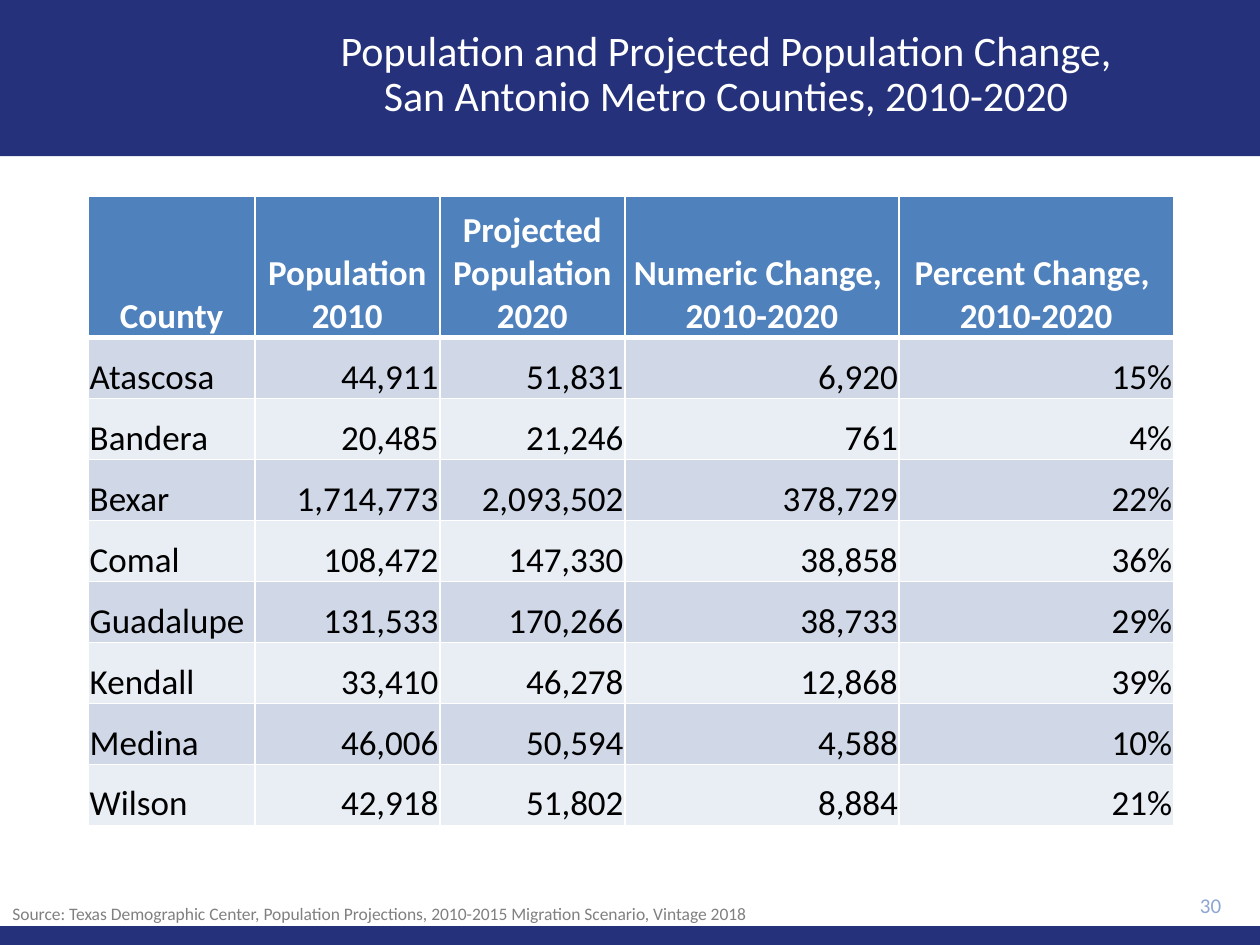
"""Build the San Antonio metro county population slide."""
from pptx import Presentation
from pptx import util as u
from pptx.dml.color import RGBColor
from pptx.enum import shapes, text
from pptx.oxml import parse_xml
from pptx.oxml.ns import nsdecls

Pt = u.Pt
TITLE = "Population and Projected Population Change, \vSan Antonio Metro Counties, 2010-2020 "
HEADINGS = ["County", "Population 2010", "Projected Population 2020",
            "Numeric Change, \n2010-2020", "Percent Change, \n2010-2020"]
COUNTIES = [
    ("Atascosa", "44,911", "51,831", "6,920", "15%"),
    ("Bandera", "20,485", "21,246", "761", "4%"),
    ("Bexar", "1,714,773", "2,093,502", "378,729", "22%"),
    ("Comal", "108,472", "147,330", "38,858", "36%"),
    ("Guadalupe", "131,533", "170,266", "38,733", "29%"),
    ("Kendall", "33,410", "46,278", "12,868", "39%"),
    ("Medina", "46,006", "50,594", "4,588", "10%"),
    ("Wilson", "42,918", "51,802", "8,884", "21%"),
]
SOURCE = ("Source: Texas Demographic Center, Population Projections, "
          "2010-2015 Migration Scenario, Vintage 2018")
PAGE = "30"

FONT = "Calibri"
NAVY = RGBColor(0x25, 0x32, 0x7B)
WHITE = RGBColor(0xFF, 0xFF, 0xFF)
BLACK = RGBColor(0, 0, 0)
GRAY = RGBColor(0x80, 0x80, 0x80)
PAGE_BLUE = RGBColor(0x8F, 0xA5, 0xD1)
HEADING_BLUE = RGBColor(0x4F, 0x81, 0xBD)
BANDS = [RGBColor(0xD0, 0xD8, 0xE8), RGBColor(0xE9, 0xED, 0xF4)]

WIDTH, HEIGHT = 720, 540
COLUMN_WIDTHS = [95, 105.75, 105.75, 156.75, 156.75]
HEADING_HEIGHT, ROW_HEIGHT = 80.6, 34.85
LEFT, CENTER, RIGHT = text.PP_ALIGN.LEFT, text.PP_ALIGN.CENTER, text.PP_ALIGN.RIGHT


def style(frame, size, color, align, bold=False):
    """Format every paragraph of a text frame alike."""
    for paragraph in frame.paragraphs:
        paragraph.alignment = align
        font = paragraph.font
        font.name, font.size, font.bold = FONT, Pt(size), bold
        font.color.rgb = color


def add_bar(slide, top, height):
    """Put a full-width navy bar behind the title."""
    bar = slide.shapes.add_shape(shapes.MSO_SHAPE.RECTANGLE, 0, Pt(top), Pt(WIDTH), Pt(height))
    bar.shadow.inherit = False
    bar.fill.solid()
    bar.fill.fore_color.rgb = NAVY
    bar.line.fill.background()
    slide.shapes.title.element.addprevious(bar.element)


def add_title(slide):
    """Fill and place the title placeholder."""
    title = slide.shapes.title
    title.left, title.top, title.width, title.height = Pt(122.4), Pt(7.2), Pt(590.4), Pt(72)
    title.text_frame.text = TITLE
    title.text_frame.vertical_anchor = text.MSO_ANCHOR.MIDDLE
    style(title.text_frame, 24, WHITE, CENTER)
    title.text_frame.paragraphs[0].line_spacing = 0.9


def add_label(slide, wording, box, size, color, align, anchor, wrap):
    """Add a small line of text."""
    label = slide.shapes.add_textbox(*map(Pt, box)).text_frame
    label.text = wording
    label.word_wrap = wrap
    label.vertical_anchor = anchor
    style(label, size, color, align)


def add_borders(cell, bottom):
    """Draw white rules around a cell."""
    for side, width in (("L", 1), ("R", 1), ("T", 1), ("B", bottom)):
        cell._tc.get_or_add_tcPr().append(parse_xml(
            f'<a:ln{side} {nsdecls("a")} w="{Pt(width)}"><a:solidFill>'
            f'<a:srgbClr val="{WHITE}"/></a:solidFill></a:ln{side}>'))


def add_county_table(slide):
    """Add the table with a heading row and banded county rows."""
    rows = [HEADINGS, *COUNTIES]
    table = slide.shapes.add_table(
        len(rows), len(HEADINGS), Pt(50.6), Pt(112.4), Pt(sum(COLUMN_WIDTHS)),
        Pt(HEADING_HEIGHT + ROW_HEIGHT * len(COUNTIES))).table
    for column, width in zip(table.columns, COLUMN_WIDTHS):
        column.width = Pt(width)
    for r, values in enumerate(rows):
        heading = r == 0
        table.rows[r].height = Pt(HEADING_HEIGHT if heading else ROW_HEIGHT)
        for c, value in enumerate(values):
            cell = table.cell(r, c)
            cell.text = value
            cell.vertical_anchor = text.MSO_ANCHOR.BOTTOM
            cell.margin_left = cell.margin_right = cell.margin_top = Pt(0.7)
            cell.margin_bottom = 0
            add_borders(cell, 3 if heading else 1)
            cell.fill.solid()
            cell.fill.fore_color.rgb = HEADING_BLUE if heading else BANDS[(r - 1) % 2]
            align = CENTER if heading else RIGHT if c else LEFT
            style(cell.text_frame, 20, WHITE if heading else BLACK, align, heading)


def main():
    """Build and save the slide."""
    deck = Presentation()
    deck.slide_width, deck.slide_height = Pt(WIDTH), Pt(HEIGHT)
    slide = deck.slides.add_slide(deck.slide_layouts[5])
    add_bar(slide, 0, 89.3)
    add_bar(slide, 529.2, 10.8)
    add_title(slide)
    add_county_table(slide)
    add_label(slide, PAGE, (640.8, 504.7, 64.1, 24.5), 12, PAGE_BLUE, RIGHT,
              text.MSO_ANCHOR.MIDDLE, True)
    add_label(slide, SOURCE, (0, 512.6, 443.5, 19.4), 10, GRAY, LEFT,
              text.MSO_ANCHOR.TOP, False)
    deck.save("out.pptx")


if __name__ == "__main__":
    main()
